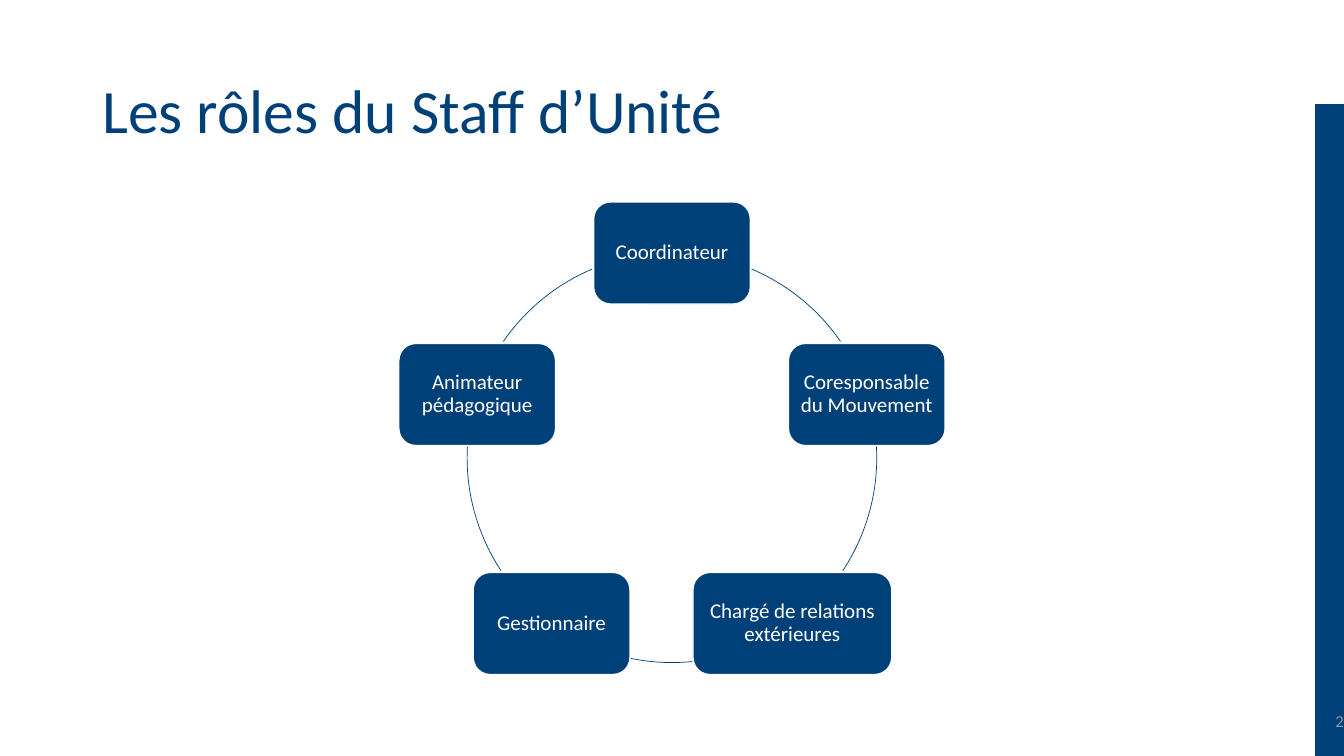
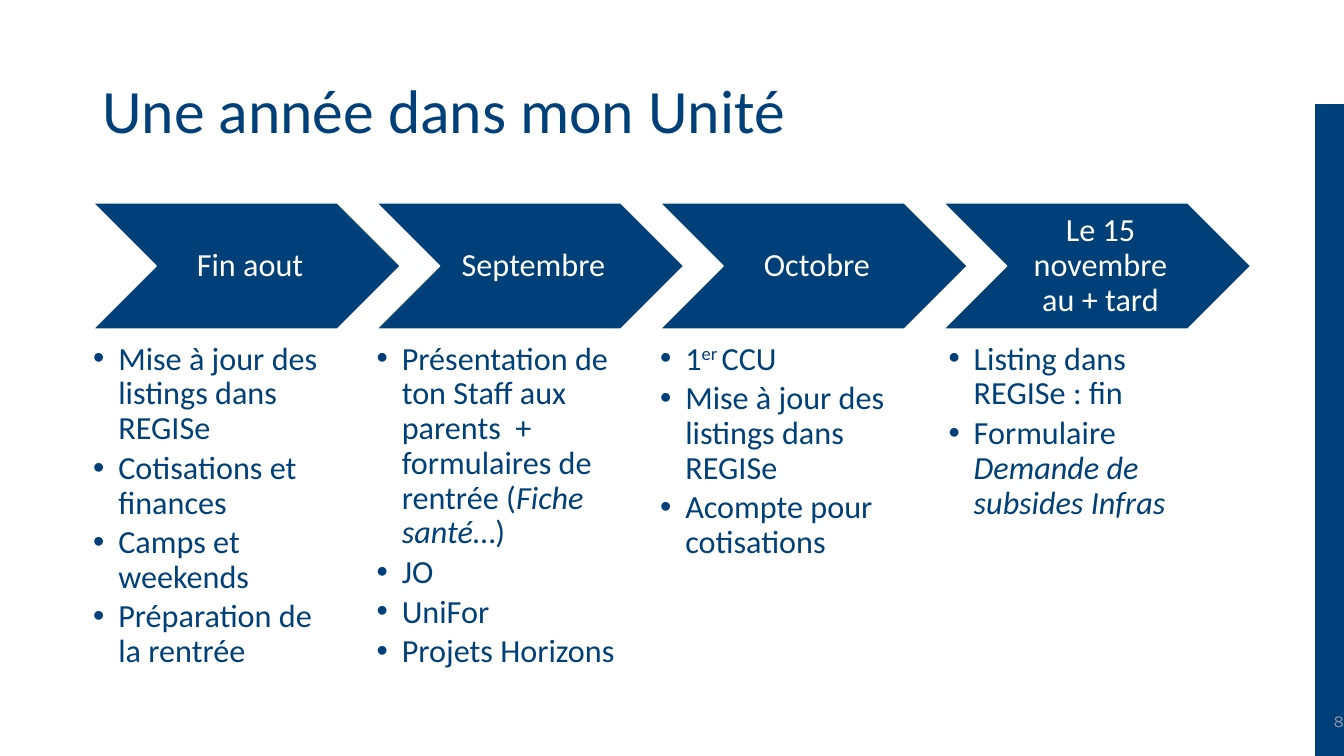
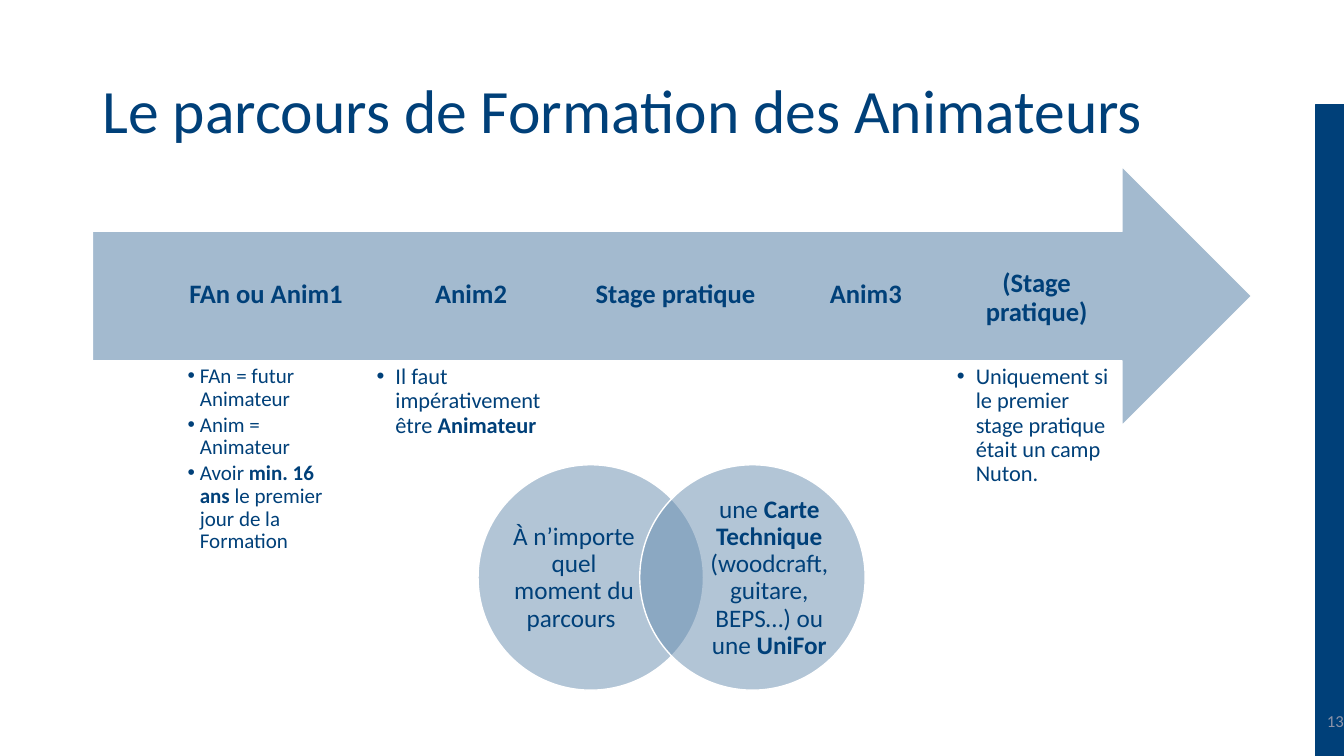
from dataclasses import dataclass
from math import cos, radians, sin
from typing import NamedTuple

from lxml import etree
from pptx import Presentation
from pptx.dml.color import RGBColor
from pptx.enum.shapes import MSO_SHAPE as Preset
from pptx.enum.text import MSO_ANCHOR as Anchor, MSO_AUTO_SIZE as AutoSize, PP_ALIGN as Align
from pptx.oxml.ns import qn
from pptx.util import Pt

NAVY, WHITE, GREY = "004079", "FFFFFF", "8C93A8"
PALE_BLUE, MID_BLUE = "A3BACF", "668CAF"
FONT = "Calibri"
TITLE_ONLY, COMPARISON = 5, 4  # template layouts


class Run(NamedTuple):
    text: str
    bold: bool = False
    italic: bool = False
    baseline: int = 0


class Box(NamedTuple):
    left: float
    top: float
    width: float
    height: float


@dataclass
class Role:
    name: str
    arc_start: float
    arc_end: float
    width: float = 112


@dataclass
class Period:
    name: str
    tasks: list
    shift: float = 0


@dataclass
class Step:
    name: str
    left: float
    top: float = 165


@dataclass
class Notes:
    box: Box
    size: float
    indent: float
    lines: list


@dataclass
class Circle:
    left: float
    text_left: float
    runs: list


# Shared helpers
def color(target, value: str) -> None:
    target.rgb = RGBColor.from_string(value)


def place(shape, box: Box) -> None:
    shape.left, shape.top, shape.width, shape.height = (Pt(v) for v in box)


def write(shape, paragraphs, *, size, ink=NAVY, font=FONT, bold=False, align=Align.LEFT,
          anchor=Anchor.TOP, insets=(0, 0, 0, 0), spacing=0.9, indent=0) -> None:
    """Fill a shape; each paragraph is a string or a list of runs. Indent adds bullets."""
    frame = shape.text_frame
    frame.word_wrap = True
    frame.auto_size = AutoSize.NONE
    frame.vertical_anchor = anchor
    (frame.margin_left, frame.margin_top,
     frame.margin_right, frame.margin_bottom) = (Pt(v) for v in insets)
    for number, content in enumerate(paragraphs):
        line = frame.add_paragraph() if number else frame.paragraphs[0]
        if indent:
            props = line._p.get_or_add_pPr()
            props.set("marL", str(Pt(indent)))
            props.set("indent", str(-Pt(indent)))
            etree.SubElement(props, qn("a:buFont")).set("typeface", "Arial")
            etree.SubElement(props, qn("a:buChar")).set("char", "•")
        line.alignment = align
        line.line_spacing = spacing
        line.space_before = Pt(0)
        line.space_after = Pt(size * 0.15 if indent else 0)
        for part in [Run(content, bold)] if isinstance(content, str) else content:
            run = line.add_run()
            run.text = part.text
            run.font.name, run.font.size = font, Pt(size)
            run.font.bold, run.font.italic = part.bold, part.italic
            color(run.font.color, ink)
            if part.baseline:
                run._r.get_or_add_rPr().set("baseline", str(part.baseline * 1000))


def draw(slide, preset, box: Box, fill=None, line=WHITE, weight=1.0, alpha=100):
    shape = slide.shapes.add_shape(preset, *(Pt(v) for v in box))
    shape.shadow.inherit = False
    if fill:
        shape.fill.solid()
        color(shape.fill.fore_color, fill)
        if alpha < 100:
            tint = shape.fill._xPr.find(".//" + qn("a:srgbClr"))
            etree.SubElement(tint, qn("a:alpha")).set("val", str(alpha * 1000))
    else:
        shape.fill.background()
    color(shape.line.color, line)
    shape.line.width = Pt(weight)
    return shape


def label(slide, box: Box, paragraphs, **style) -> None:
    write(slide.shapes.add_textbox(*(Pt(v) for v in box)), paragraphs, **style)


def start_slide(deck, layout: int, title: str, number: str, number_font=FONT):
    """Add a slide with its title, side band and page number."""
    slide = deck.slides.add_slide(deck.slide_layouts[layout])
    place(slide.shapes.title, Box(66, 29, 828, 104))
    write(slide.shapes.title, [title], size=44, anchor=Anchor.MIDDLE,
          insets=(7.2, 3.6, 7.2, 3.6))
    draw(slide, Preset.RECTANGLE, Box(939.5, 75, 20.5, 465), NAVY, NAVY)
    label(slide, Box(751, 500.5, 209, 28.5), [number], size=12, ink=GREY, font=number_font,
          align=Align.RIGHT, anchor=Anchor.MIDDLE, spacing=1)
    return slide


def fill_lists(slide, lists: list) -> None:
    """Put each list in a body placeholder and remove the spare ones."""
    bodies = [p for p in slide.placeholders if p.placeholder_format.idx]
    for body, notes in zip(bodies, lists):
        place(body, notes.box)
        write(body, notes.lines, size=notes.size, indent=notes.indent)
    for spare in bodies[len(lists):]:
        spare.element.getparent().remove(spare.element)


# Slide content
ROLES = [
    Role("Coordinateur", 292.9, 325.4),
    Role("Coresponsable du Mouvement", 356.9, 33.5),
    Role("Chargé de relations extérieures", 84.3, 101.6, width=142),
    Role("Gestionnaire", 146.5, 183.1),
    Role("Animateur pédagogique", 214.6, 247.1),
]

PERIODS = [
    Period("Fin aout", ["Mise à jour des listings dans REGISe", "Cotisations et finances",
                        "Camps et weekends", "Préparation de la rentrée"]),
    Period("Septembre", [
        [Run("Présentation de ton Staff aux parents  + formulaires de rentrée ("),
         Run("Fiche santé", italic=True), Run("…)")],
        "JO", "UniFor", "Projets Horizons"]),
    Period("Octobre", [[Run("1"), Run("er ", baseline=30), Run("CCU")],
                       "Mise à jour des listings dans REGISe", "Acompte pour cotisations"]),
    Period("Le 15 novembre au + tard", [
        "Listing dans REGISe : fin",
        [Run("Formulaire "), Run("Demande de subsides Infras", italic=True)]], shift=3.5),
]

STEPS = [
    Step("FAn ou Anim1", 133),
    Step("Anim2", 279.5),
    Step("Stage pratique", 425.5),
    Step("Anim3", 561.5),
    Step("(Stage pratique)", 683.5, top=167),
]

STEP_NOTES = [
    Notes(Box(134, 261, 114, 140), 15, 8.8, [
        "FAn = futur Animateur", "Anim = Animateur",
        [Run("Avoir "), Run("min. 16 ans", bold=True),
         Run(" le premier jour de la Formation")]]),
    Notes(Box(269, 261, 134, 196), 16, 13.5, [
        [Run("Il faut impérativement être "), Run("Animateur", bold=True)]]),
    Notes(Box(683.5, 261, 114, 196), 16, 13.5, [
        "Uniquement si le premier stage pratique était un camp Nuton."]),
]

CIRCLES = [
    Circle(341.5, 363.5, [Run("À n’importe quel moment du parcours ")]),
    Circle(457, 503, [Run("une "), Run("Carte Technique ", bold=True),
                      Run("(woodcraft, guitare, BEPS…) ou une "), Run("UniFor", bold=True)]),
]


def build_roles(deck) -> None:
    slide = start_slide(deck, TITLE_ONLY, "Les rôles du Staff d’Unité", "2")
    center_x, center_y, radius, height = 480, 327, 146.3, 73
    ring = Box(center_x - radius, center_y - radius, 2 * radius, 2 * radius)
    for index, role in enumerate(ROLES):
        angle = radians(360 / len(ROLES) * index - 90)
        x, y = center_x + radius * cos(angle), center_y + radius * sin(angle)
        card = draw(slide, Preset.ROUNDED_RECTANGLE,
                    Box(x - role.width / 2, y - height / 2, role.width, height), NAVY)
        write(card, [role.name], size=15, ink=WHITE, align=Align.CENTER,
              anchor=Anchor.MIDDLE, insets=(4.5,) * 4)
        arc = draw(slide, Preset.ARC, ring, line=NAVY, weight=0.5)
        # Angles are stored in 60000ths of a degree, adjustments in 100000ths
        arc.adjustments[0] = role.arc_start * 0.6
        arc.adjustments[1] = role.arc_end * 0.6


def build_year(deck) -> None:
    slide = start_slide(deck, COMPARISON, "Une année dans mon Unité", "8", "Karla")
    left, step = 66.5, 202.5
    lists = []
    for index, period in enumerate(PERIODS):
        x = left + step * index
        chevron = draw(slide, Preset.CHEVRON, Box(x, 145, 219.5, 90), NAVY)
        write(chevron, [period.name], size=23, ink=WHITE, align=Align.CENTER,
              anchor=Anchor.MIDDLE, insets=(7, 2.2, 2.2, 2.2))
        lists.append(Notes(Box(x + period.shift, 244.5, 175.5 - 2 * period.shift, 240),
                           23, 18, period.tasks))
    fill_lists(slide, lists)


def build_training(deck) -> None:
    slide = start_slide(deck, COMPARISON, "Le parcours de Formation des Animateurs", "13")
    draw(slide, Preset.RIGHT_ARROW, Box(66, 119, 828, 185), PALE_BLUE)
    for step in STEPS:
        label(slide, Box(step.left, step.top, 114, 92), [step.name], size=19, bold=True,
              align=Align.CENTER, anchor=Anchor.MIDDLE, insets=(0, 15, 0, 15))
    fill_lists(slide, STEP_NOTES)
    # Overlapping circles
    for circle in CIRCLES:
        draw(slide, Preset.OVAL, Box(circle.left, 332, 161, 161), MID_BLUE, alpha=50)
        label(slide, Box(circle.text_left, 351, 93, 124), [circle.runs], size=18,
              align=Align.CENTER, anchor=Anchor.MIDDLE)


def main() -> None:
    deck = Presentation()
    deck.slide_width, deck.slide_height = Pt(960), Pt(540)
    for build in (build_roles, build_year, build_training):
        build(deck)
    deck.save("out.pptx")


if __name__ == "__main__":
    main()
